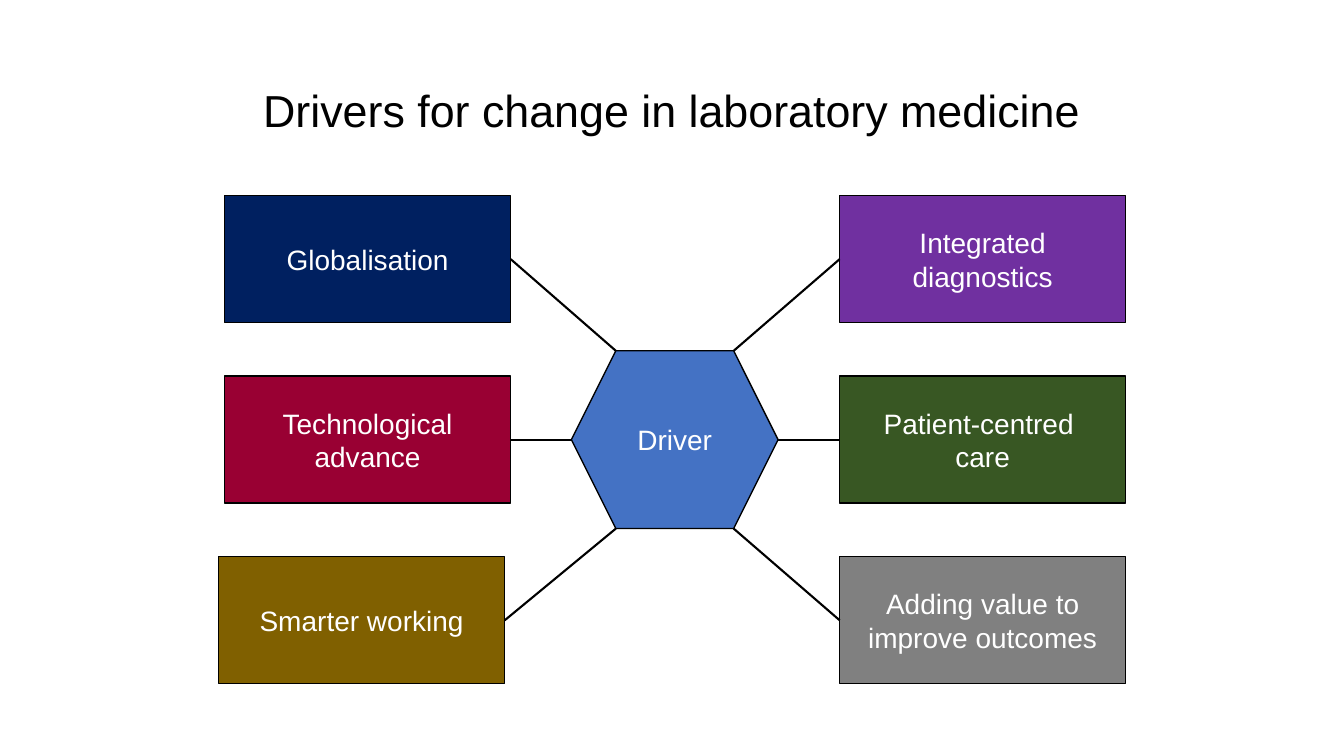
import pptx
import pptx.dml.color
import pptx.enum.shapes
import pptx.enum.text
import pptx.oxml
import pptx.util
from pptx.util import Cm

COLOURS = {
    "black": "000000", "white": "FFFFFF", "navy": "002060", "crimson": "990033",
    "ochre": "806000", "purple": "7030A0", "green": "385723", "grey": "808080",
    "blue": "4472C4",
}
BOX_WIDTH, BOX_HEIGHT = 7.21, 3.2
BOX_TOP, ROW_STEP = 4.93, 4.55
RIGHT_LEFT = 21.16
HUB_LEFT, HUB_TOP, HUB_WIDTH, HUB_HEIGHT = 14.4, 8.84, 5.21, 4.48

# Per row: left edge of the left box, then text and colour of both boxes
ROWS = [
    (5.66, ("Globalisation", "navy"), ("Integrated\ndiagnostics", "purple")),
    (5.66, ("Technological advance", "crimson"), ("Patient-centred \ncare", "green")),
    (5.51, ("Smarter working", "ochre"), ("Adding value to improve outcomes", "grey")),
]


def rgb(name):
    return pptx.dml.color.RGBColor.from_string(COLOURS[name])


def write_text(shape, text, *, size, colour, font="Arial", line_spacing=None):
    """Fill the shape with centred text, one paragraph per line."""
    frame = shape.text_frame
    frame.word_wrap = True
    frame.vertical_anchor = pptx.enum.text.MSO_ANCHOR.MIDDLE
    frame.text = text
    for paragraph in frame.paragraphs:
        paragraph.alignment = pptx.enum.text.PP_ALIGN.CENTER
        paragraph.line_spacing = line_spacing
        for run in paragraph.runs:
            run.font.name = font
            run.font.size = pptx.util.Pt(size)
            run.font.color.rgb = rgb(colour)


class DiagramSlide:
    """Holds the diagram's style and the slide it is drawn on."""

    title_size = 32
    label_size = 20
    outline_width = 1
    link_width = 1.5

    def __init__(self, presentation):
        self.slide = presentation.slides.add_slide(presentation.slide_layouts[6])

    def title(self, text, left, top, width, height):
        shape = self.slide.shapes.add_textbox(Cm(left), Cm(top), Cm(width), Cm(height))
        write_text(shape, text, size=self.title_size, colour="black", line_spacing=0.9)

    def node(self, kind, text, fill, left, top, width, height):
        shape = self.slide.shapes.add_shape(
            kind, Cm(left), Cm(top), Cm(width), Cm(height))
        shape.shadow.inherit = False
        shape.fill.solid()
        shape.fill.fore_color.rgb = rgb(fill)
        shape.line.color.rgb = rgb("black")
        shape.line.width = pptx.util.Pt(self.outline_width)
        write_text(shape, text, size=self.label_size, colour="white")

    def link(self, start, end):
        connector = self.slide.shapes.add_connector(
            pptx.enum.shapes.MSO_CONNECTOR.STRAIGHT, *map(Cm, start + end))
        connector.line.color.rgb = rgb("black")
        connector.line.width = pptx.util.Pt(self.link_width)
        properties = connector._element.spPr
        properties.append(pptx.oxml.parse_xml(
            '<a:effectLst xmlns:a="http://schemas.openxmlformats.org/drawingml/2006/main"/>'))


def main():
    presentation = pptx.Presentation()
    presentation.slide_width = Cm(33.87)
    presentation.slide_height = Cm(19.05)
    diagram = DiagramSlide(presentation)
    diagram.title("Drivers for change in laboratory medicine", 2.33, 1.01, 29.21, 3.68)

    shapes = pptx.enum.shapes.MSO_SHAPE
    diagram.node(shapes.HEXAGON, "Driver", "blue",
                 HUB_LEFT, HUB_TOP, HUB_WIDTH, HUB_HEIGHT)

    for row, (left_edge, left_box, right_box) in enumerate(ROWS):
        top = BOX_TOP + row * ROW_STEP
        middle = top + BOX_HEIGHT / 2
        for edge, (text, fill) in ((left_edge, left_box), (RIGHT_LEFT, right_box)):
            diagram.node(shapes.RECTANGLE, text, fill, edge, top, BOX_WIDTH, BOX_HEIGHT)

        # The hexagon's slanted sides reach in by a quarter of its height
        inset = 0 if row == 1 else HUB_HEIGHT / 4
        corner = HUB_TOP + row * HUB_HEIGHT / 2
        diagram.link((left_edge + BOX_WIDTH, middle), (HUB_LEFT + inset, corner))
        diagram.link((HUB_LEFT + HUB_WIDTH - inset, corner), (RIGHT_LEFT, middle))

    presentation.save("out.pptx")


if __name__ == "__main__":
    main()
